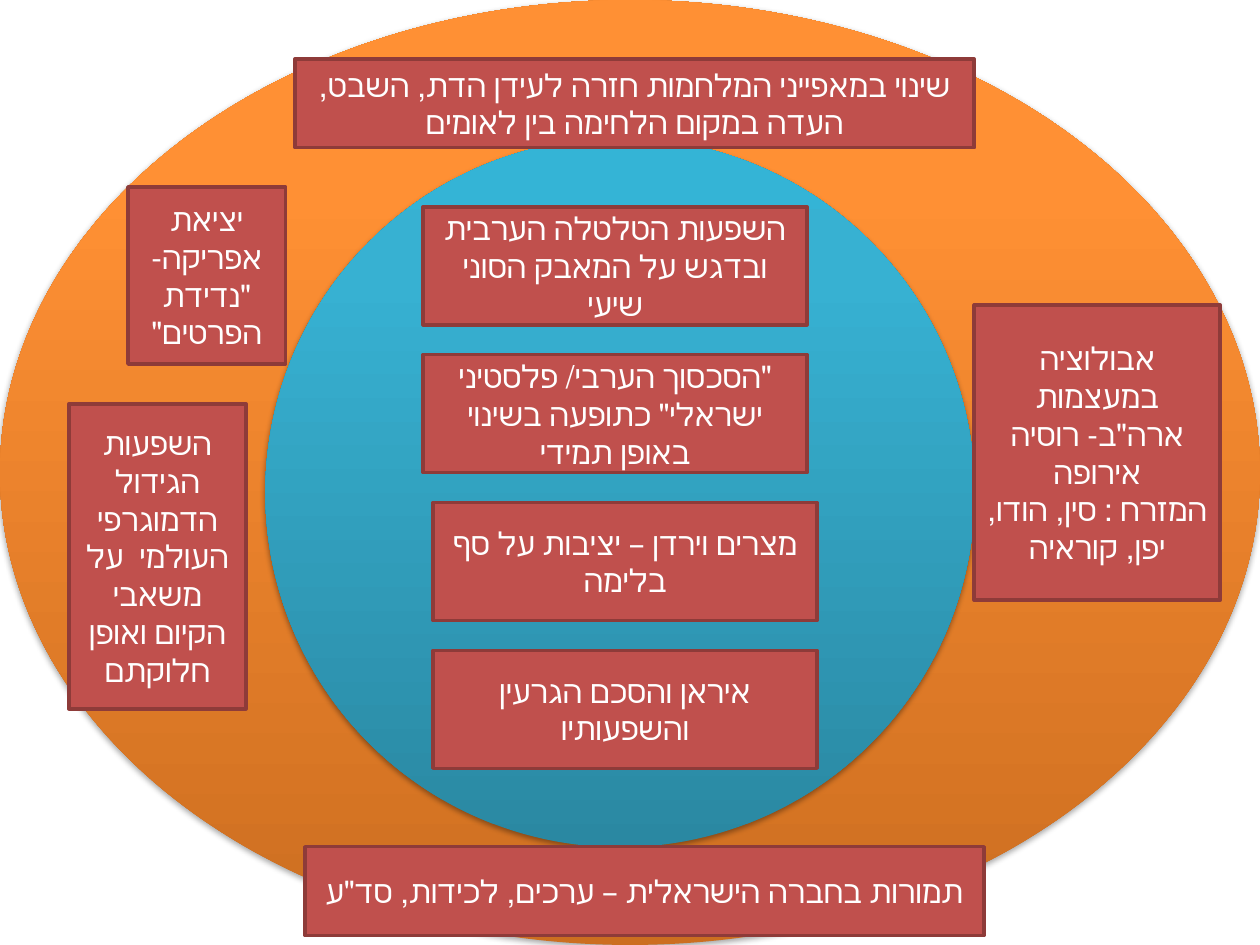
from copy import deepcopy
from dataclasses import dataclass

from lxml import etree
from pptx import Presentation
from pptx.dml.color import RGBColor
from pptx.enum.shapes import MSO_SHAPE
from pptx.enum.text import MSO_ANCHOR, PP_ALIGN
from pptx.oxml.ns import qn
from pptx.util import Cm, Pt

OVAL, RECT = MSO_SHAPE.OVAL, MSO_SHAPE.RECTANGLE
CENTER, MIDDLE = PP_ALIGN.CENTER, MSO_ANCHOR.MIDDLE
BLANK = 6
RED, EDGE, WHITE = "C0504D", "8E3B39", "FFFFFF"


@dataclass
class Ring:
    left: float
    top: float
    width: float
    height: float
    stops: list[tuple[float, str]]


@dataclass
class Box:
    left: float
    top: float
    width: float
    height: float
    lines: list[str]


RINGS = [
    Ring(0, 0, 25.4, 19.05, [(0, "CC6E20"), (0.8, "FF9034"), (1, "FF9136")]),
    Ring(5.35, 2.78, 14.3, 14.3, [(0, "2A88A2"), (0.8, "37B1D2"), (1, "34B4D6")]),
]

# Topics of the inner circle, stacked at an equal step: left edge and text
CORE = [
    (8.53, "השפעות הטלטלה הערבית ובדגש על המאבק הסוני שיעי"),
    (8.53, "\"הסכסוך הערבי/ פלסטיני ישראלי\" כתופעה בשינוי באופן תמידי"),
    (8.73, "מצרים וירדן – יציבות על סף בלימה"),
    (8.73, "איראן והסכם הגרעין והשפעותיו"),
]
CORE_TOP, CORE_STEP, CORE_W, CORE_H = 4.17, 2.98, 7.74, 2.38

OUTER = [
    Box(5.95, 1.19, 13.69, 1.79,
        ["שינוי במאפייני המלחמות חזרה לעידן הדת, השבט, העדה במקום הלחימה בין לאומים"]),
    Box(2.58, 3.77, 3.18, 3.57, ["יציאת אפריקה- \"נדידת הפרטים\""]),
    Box(1.39, 8.14, 3.57, 6.15,
        ["השפעות הגידול הדמוגרפי העולמי  על משאבי הקיום ואופן חלוקתם"]),
    Box(19.64, 6.15, 4.96, 5.95,
        ["אבולוציה במעצמות", "ארה\"ב- רוסיה", "אירופה",
         "המזרח : סין, הודו, יפן, קוראיה"]),
    Box(6.15, 17.07, 13.69, 1.79,
        ["תמורות בחברה הישראלית – ערכים, לכידות, סד\"ע"]),
]


def color(code: str) -> RGBColor:
    return RGBColor.from_string(code)


def place(slide, kind, item: Ring | Box):
    shape = slide.shapes.add_shape(
        kind, Cm(item.left), Cm(item.top), Cm(item.width), Cm(item.height))
    shape.shadow.inherit = False
    return shape


def shade(shape, stops: list[tuple[float, str]]) -> None:
    """Fill the shape with a gradient that runs from bottom to top."""
    fill = shape.fill
    fill.gradient()
    fill.gradient_angle = 90
    group = shape._element.spPr.find(".//" + qn("a:gsLst"))
    while len(group) < len(stops):
        group.append(deepcopy(group[-1]))
    for stop, (pos, code) in zip(fill.gradient_stops, stops):
        stop.position = pos
        stop.color.rgb = color(code)


def cast(shape) -> None:
    """Add a soft shadow below the shape."""
    effects = shape._element.spPr.find(qn("a:effectLst"))
    outer = etree.SubElement(
        effects, qn("a:outerShdw"), blurRad=str(Pt(3.1)), dist=str(Pt(1.8)),
        dir="5400000", rotWithShape="0")
    black = etree.SubElement(outer, qn("a:srgbClr"), val="000000")
    etree.SubElement(black, qn("a:alpha"), val="35000")


def write(shape, lines: list[str], *, size: float = 18, font: str = "Calibri",
          ink: str = WHITE) -> None:
    """Put centred right-to-left paragraphs in the shape."""
    frame = shape.text_frame
    frame.word_wrap = True
    frame.vertical_anchor = MIDDLE
    for i, line in enumerate(lines):
        para = frame.add_paragraph() if i else frame.paragraphs[0]
        para.alignment = CENTER
        para._p.get_or_add_pPr().set("rtl", "1")
        run = para.add_run()
        run.text = line
        run.font.size = Pt(size)
        run.font.name = font
        run.font.color.rgb = color(ink)


def draw_ring(slide, ring: Ring) -> None:
    shape = place(slide, OVAL, ring)
    shade(shape, ring.stops)
    shape.line.fill.background()
    cast(shape)


def draw_box(slide, box: Box) -> None:
    shape = place(slide, RECT, box)
    shape.fill.solid()
    shape.fill.fore_color.rgb = color(RED)
    shape.line.color.rgb = color(EDGE)
    shape.line.width = Pt(2)
    write(shape, box.lines)


def main() -> None:
    deck = Presentation()
    deck.slide_width, deck.slide_height = Cm(25.4), Cm(19.05)
    slide = deck.slides.add_slide(deck.slide_layouts[BLANK])
    for ring in RINGS:
        draw_ring(slide, ring)
    core = [Box(left, CORE_TOP + i * CORE_STEP, CORE_W, CORE_H, [text])
            for i, (left, text) in enumerate(CORE)]
    for box in core + OUTER:
        draw_box(slide, box)
    deck.save("out.pptx")


if __name__ == "__main__":
    main()
